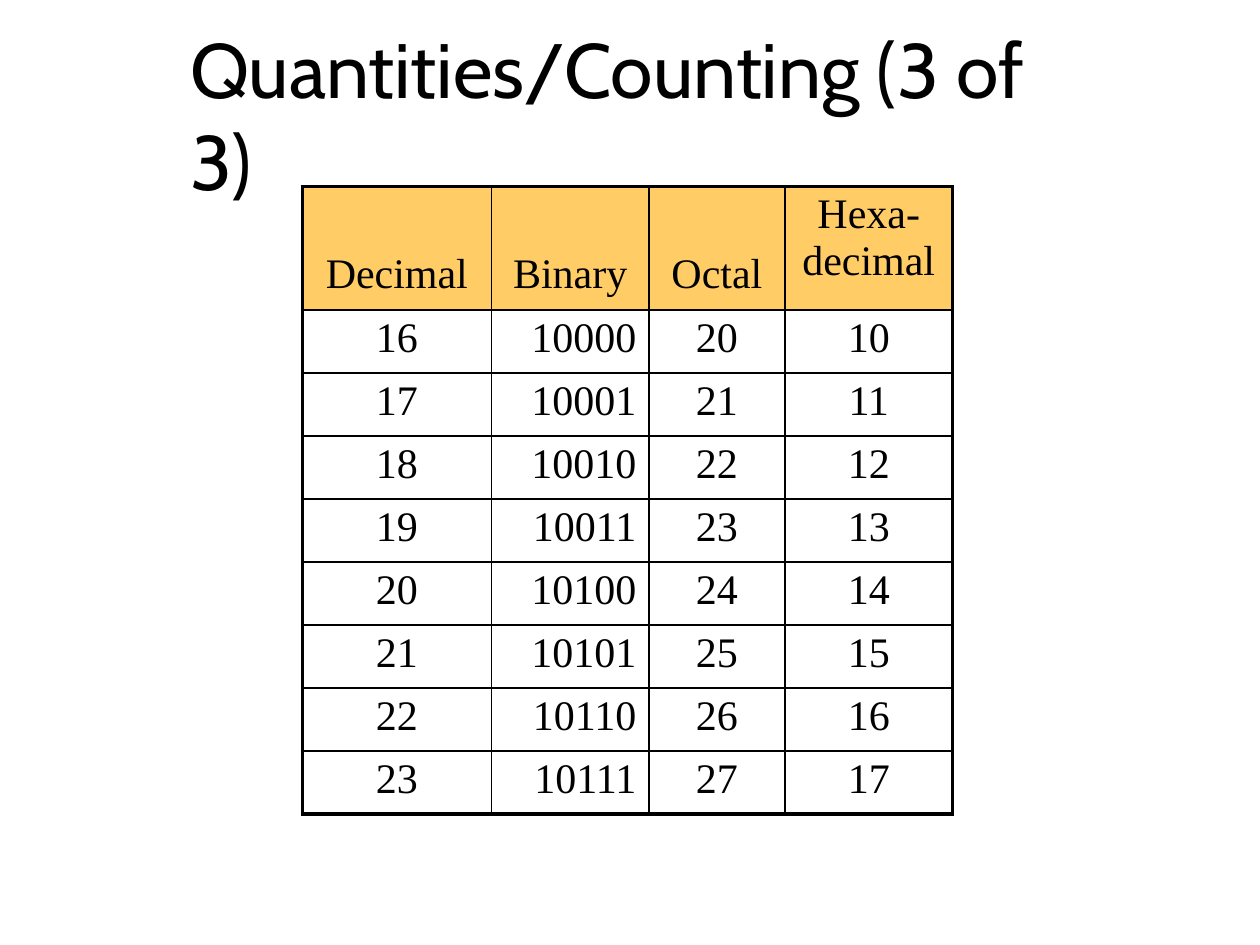
from lxml.etree import SubElement
from pptx import Presentation
from pptx.dml.color import RGBColor
from pptx.enum.text import MSO_ANCHOR, PP_ALIGN
from pptx.oxml.ns import qn
from pptx.util import Inches, Pt

BLACK = RGBColor(0x00, 0x00, 0x00)
AMBER = RGBColor(0xFF, 0xCC, 0x66)

HEADERS = ["Decimal", "Binary", "Octal", "Hexa-\vdecimal"]
COUNTS = [[f"{n}", f"{n:b}", f"{n:o}", f"{n:x}"] for n in range(16, 24)]
COLUMN_WIDTHS = [1.5, 1.25, 1.08, 1.33]
HEADER_HEIGHT, ROW_HEIGHT = 0.98, 0.5
BINARY, HEXADECIMAL = 1, 3
THICK, THIN = 2.25, 1


def style_text(paragraph, font_name, size):
    paragraph.font.name = font_name
    paragraph.font.size = Pt(size)
    paragraph.font.color.rgb = BLACK


def add_title(slide, left, top, width, height):
    frame = slide.shapes.add_textbox(left, top, width, height).text_frame
    frame.word_wrap = True
    frame.margin_left = frame.margin_top = Inches(0.01)
    frame.margin_right = frame.margin_bottom = 0
    frame.text = "Quantities/Counting (3 of 3)"
    style_text(frame.paragraphs[0], "Cabin", 44)


def set_borders(cell, widths):
    """Draw the left, right, top and bottom cell lines, in that order."""
    properties = cell._tc.get_or_add_tcPr()
    for side, width in zip("LRTB", widths):
        line = SubElement(properties, qn(f"a:ln{side}"), w=str(Pt(width)))
        fill = SubElement(line, qn("a:solidFill"))
        SubElement(fill, qn("a:srgbClr"), val=str(BLACK))


def fill_cell(cell, text, row, column):
    is_header = row == 0
    cell.margin_left = cell.margin_right = cell.margin_bottom = 0
    cell.margin_top = Inches(0.04)
    cell.text = text
    paragraph = cell.text_frame.paragraphs[0]
    paragraph.alignment = PP_ALIGN.CENTER
    style_text(paragraph, "Times New Roman", 24)

    # Short headings sit low, binary numbers line up on the right
    if is_header and column != HEXADECIMAL:
        cell.vertical_anchor = MSO_ANCHOR.BOTTOM
        cell.margin_bottom = Inches(0.1)
    elif not is_header and column == BINARY:
        paragraph.alignment = PP_ALIGN.RIGHT
        cell.margin_right = Inches(0.1)

    # Thick lines only around the outside of the table
    outer_edges = [column == 0, column == len(HEADERS) - 1,
                   is_header, row == len(COUNTS)]
    set_borders(cell, [THICK if outer else THIN for outer in outer_edges])
    if is_header:
        cell.fill.solid()
        cell.fill.fore_color.rgb = AMBER
    else:
        cell.fill.background()


def add_counting_table(slide, left, top, width, height):
    rows = [HEADERS] + COUNTS
    table = slide.shapes.add_table(
        len(rows), len(HEADERS), left, top, width, height).table
    table.first_row = table.horz_banding = False
    for column, column_width in zip(table.columns, COLUMN_WIDTHS):
        column.width = Inches(column_width)
    for r, values in enumerate(rows):
        table.rows[r].height = Inches(ROW_HEIGHT if r else HEADER_HEIGHT)
        for c, value in enumerate(values):
            fill_cell(table.cell(r, c), value, r, c)


def main():
    presentation = Presentation()
    presentation.slide_width = Inches(10)
    presentation.slide_height = Inches(7.5)
    slide = presentation.slides.add_slide(presentation.slide_layouts[6])
    add_title(slide, Inches(1.5), Inches(0.16), Inches(7.01), Inches(0.76))
    add_counting_table(slide, Inches(2.4), Inches(1.48),
                       Inches(sum(COLUMN_WIDTHS)),
                       Inches(HEADER_HEIGHT + ROW_HEIGHT * len(COUNTS)))
    presentation.save("out.pptx")


if __name__ == "__main__":
    main()
